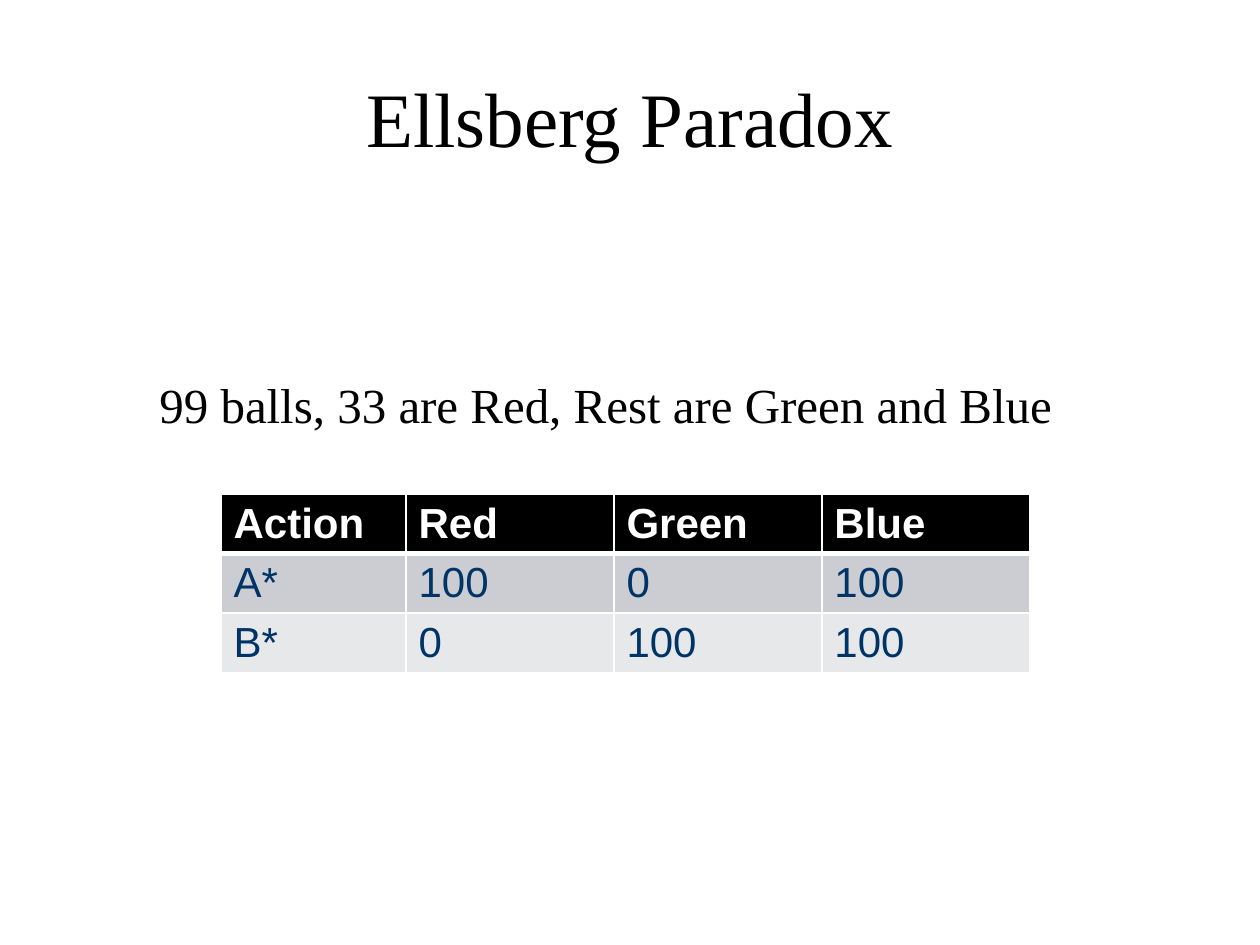
from lxml.etree import SubElement
from pptx import Presentation
from pptx.dml.color import RGBColor
from pptx.enum.text import MSO_ANCHOR, PP_ALIGN
from pptx.oxml.ns import qn
from pptx.util import Pt

PX = 914400 // 126  # EMU per pixel
SERIF, SANS = "Times New Roman", "Arial"
BLACK, WHITE, NAVY = "000000", "FFFFFF", "003366"
ROW_FILLS = [BLACK, "CBCDD3", "E7E8EA"]
PAYOFFS = [
    ["Action", "Red", "Green", "Blue"],
    ["A*", "100", "0", "100"],
    ["B*", "0", "100", "100"],
]
COLUMN_WIDTHS = [185, 208, 208, 208]
ROW_HEIGHT = 59


def px(*lengths):
    return [length * PX for length in lengths]


def color(hex_string):
    return RGBColor.from_string(hex_string)


def write(text_frame, text, size, name, hex_string, bold=False):
    text_frame.text = text
    paragraph = text_frame.paragraphs[0]
    font = paragraph.font
    font.size, font.name, font.bold = Pt(size), name, bold
    font.color.rgb = color(hex_string)
    return paragraph


def set_borders(cell, **widths):
    """Draw white cell borders; they must come before the fill in the XML."""
    properties = cell._tc.get_or_add_tcPr()
    for side, width in widths.items():
        line = SubElement(properties, qn(f"a:ln{side}"), w=str(Pt(width)))
        fill = SubElement(line, qn("a:solidFill"))
        SubElement(fill, qn("a:srgbClr"), val=WHITE)


def add_title(slide, text, box):
    title = slide.shapes.title
    title.left, title.top, title.width, title.height = px(*box)
    title.text_frame.vertical_anchor = MSO_ANCHOR.MIDDLE
    write(title.text_frame, text, 44, SERIF, BLACK).alignment = PP_ALIGN.CENTER


def add_text(slide, text, box):
    text_frame = slide.shapes.add_textbox(*px(*box)).text_frame
    text_frame.word_wrap = True
    write(text_frame, text, 28, SERIF, BLACK)


def add_payoff_table(slide, left, top):
    size = sum(COLUMN_WIDTHS), ROW_HEIGHT * len(PAYOFFS)
    table = slide.shapes.add_table(
        len(PAYOFFS), len(COLUMN_WIDTHS), *px(left, top, *size)).table
    for column, width in zip(table.columns, COLUMN_WIDTHS):
        column.width = width * PX
    for row, values in enumerate(PAYOFFS):
        header = row == 0
        for column, value in enumerate(values):
            cell = table.cell(row, column)
            # Thick rule between the header and the body
            set_borders(cell, L=1, R=1, T=3 if row == 1 else 1, B=3 if header else 1)
            cell.fill.solid()
            cell.fill.fore_color.rgb = color(ROW_FILLS[row])
            write(cell.text_frame, value, 24, SANS, WHITE if header else NAVY, header)


def main():
    presentation = Presentation()
    presentation.slide_width, presentation.slide_height = px(1260, 945)
    slide = presentation.slides.add_slide(presentation.slide_layouts[5])

    add_title(slide, "Ellsberg Paradox", (63, 38, 1134, 157))
    add_payoff_table(slide, 221, 494)
    add_text(slide, "99 balls, 33 are Red, Rest are Green and Blue", (147, 368, 966, 72))

    presentation.save("out.pptx")


if __name__ == "__main__":
    main()
